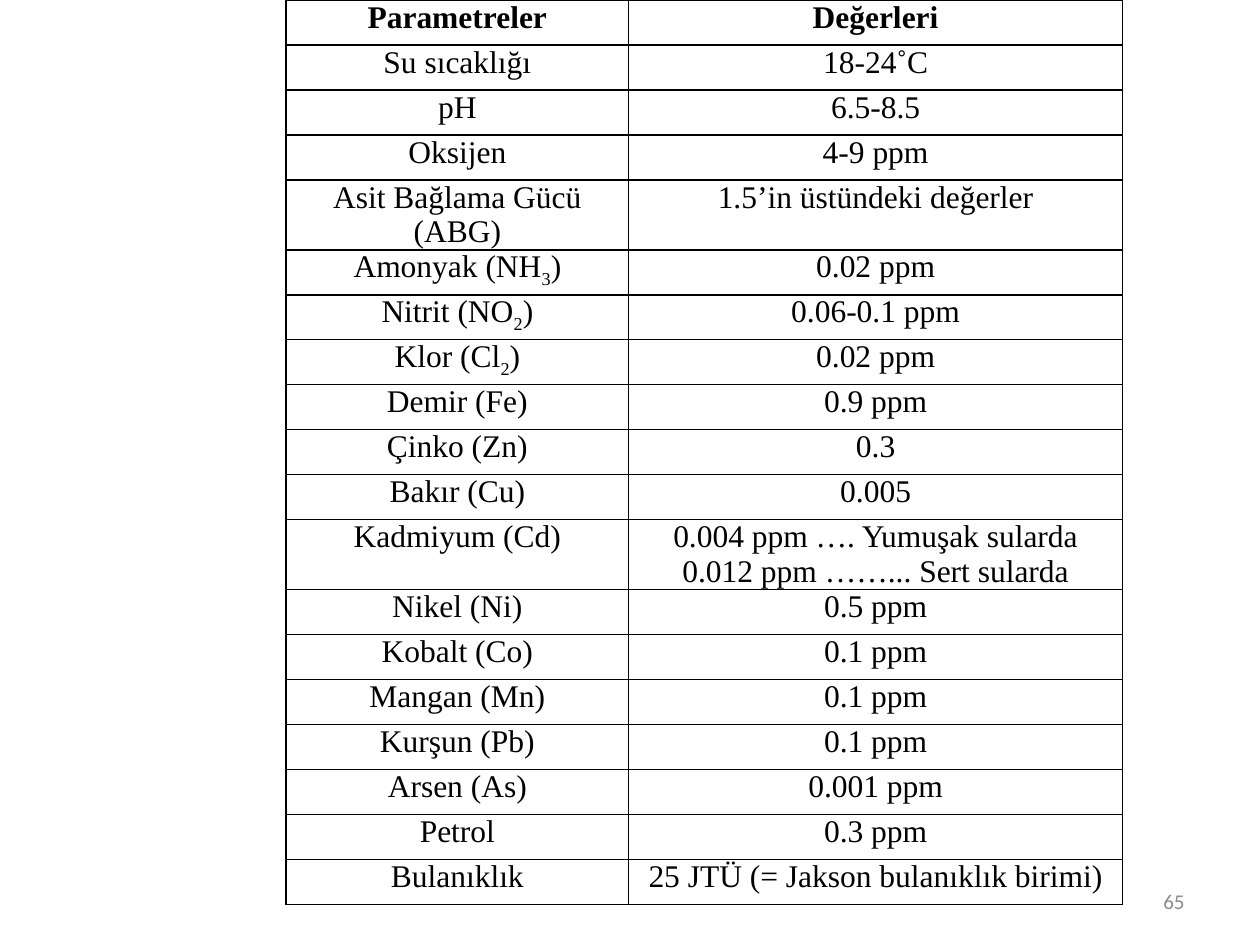
from lxml.etree import SubElement
from pptx import Presentation
from pptx.dml.color import RGBColor
from pptx.enum.text import MSO_ANCHOR, PP_ALIGN
from pptx.oxml.ns import qn
from pptx.util import Inches, Pt

# Each label is split at "_": odd pieces are subscripts
ROWS = [
    ("Parametreler", "Değerleri"),
    ("Su sıcaklığı", "18-24˚C"),
    ("pH", "6.5-8.5"),
    ("Oksijen", "4-9 ppm"),
    ("Asit Bağlama Gücü (ABG)", "1.5’in üstündeki değerler"),
    ("Amonyak (NH_3_)", "0.02 ppm"),
    ("Nitrit (NO_2_)", "0.06-0.1 ppm"),
    ("Klor (Cl_2_)", "0.02 ppm"),
    ("Demir (Fe)", "0.9 ppm"),
    ("Çinko (Zn)", "0.3"),
    ("Bakır (Cu)", "0.005"),
    ("Kadmiyum (Cd)",
     "0.004 ppm …. Yumuşak sularda\n0.012 ppm ……... Sert sularda"),
    ("Nikel (Ni)", "0.5 ppm"),
    ("Kobalt (Co)", "0.1 ppm"),
    ("Mangan (Mn)", "0.1 ppm"),
    ("Kurşun (Pb)", "0.1 ppm"),
    ("Arsen (As)", "0.001 ppm"),
    ("Petrol", "0.3 ppm"),
    ("Bulanıklık", "25 JTÜ (= Jakson bulanıklık birimi)"),
]
COL_WIDTHS = (2.72, 3.92)
TABLE_HEIGHT = 6.79  # before the two-line rows grow
CELL_FORMAT = {"margin_left": Inches(0.05), "margin_right": Inches(0.05),
               "margin_top": 0, "margin_bottom": 0}
TABLE_FONT = {"name": "Times New Roman", "size": Pt(18)}
NUMBER_FONT = {"name": "Calibri", "size": Pt(12)}


def rgb(value):
    return RGBColor.from_string(value)


def set_format(obj, values):
    for name, value in values.items():
        setattr(obj, name, value)


def add_run(p, text, font, color):
    r = p.add_run()
    r.text = text
    set_format(r.font, font)
    r.font.color.rgb = rgb(color)
    return r


def set_borders(cell, color, width):
    tc_pr = cell._tc.get_or_add_tcPr()
    for i, side in enumerate(("lnL", "lnR", "lnT", "lnB")):
        ln = tc_pr.makeelement(qn(f"a:{side}"), {"w": str(Pt(width))})
        fill = SubElement(ln, qn("a:solidFill"))
        SubElement(fill, qn("a:srgbClr"), {"val": color})
        tc_pr.insert(i, ln)  # borders come before the fill


def fill_cell(cell, text, bold):
    set_format(cell, CELL_FORMAT)
    cell.fill.background()
    set_borders(cell, "000000", 1)
    tf = cell.text_frame
    for n, line in enumerate(text.split("\n")):
        p = tf.add_paragraph() if n else tf.paragraphs[0]
        p.alignment = PP_ALIGN.CENTER
        for i, piece in enumerate(line.split("_")):
            r = add_run(p, piece, {**TABLE_FONT, "bold": bold}, "000000")
            if i % 2:
                r.font._element.set("baseline", "-25000")


def add_parameter_table(s):
    table = s.shapes.add_table(
        len(ROWS), len(COL_WIDTHS), Inches(2.27), 0,
        Inches(sum(COL_WIDTHS)), Inches(TABLE_HEIGHT)).table
    set_format(table, {"first_row": False, "horz_banding": False})
    for column, width in zip(table.columns, COL_WIDTHS):
        column.width = Inches(width)
    for i, row in enumerate(ROWS):
        for j, text in enumerate(row):
            fill_cell(table.cell(i, j), text, bold=i == 0)


def add_page_number(s, text):
    sp = s.shapes.add_textbox(Inches(7.17), Inches(6.95),
                              Inches(2.33), Inches(0.4))
    tf = sp.text_frame
    set_format(tf, {"word_wrap": True, "vertical_anchor": MSO_ANCHOR.MIDDLE})
    p = tf.paragraphs[0]
    p.alignment = PP_ALIGN.RIGHT
    add_run(p, text, NUMBER_FONT, "8C8C8C")


def main():
    prs = Presentation()
    set_format(prs, {"slide_width": Inches(10), "slide_height": Inches(7.5)})
    s = prs.slides.add_slide(prs.slide_layouts[6])
    add_parameter_table(s)
    add_page_number(s, "65")
    prs.save("out.pptx")


if __name__ == "__main__":
    main()
